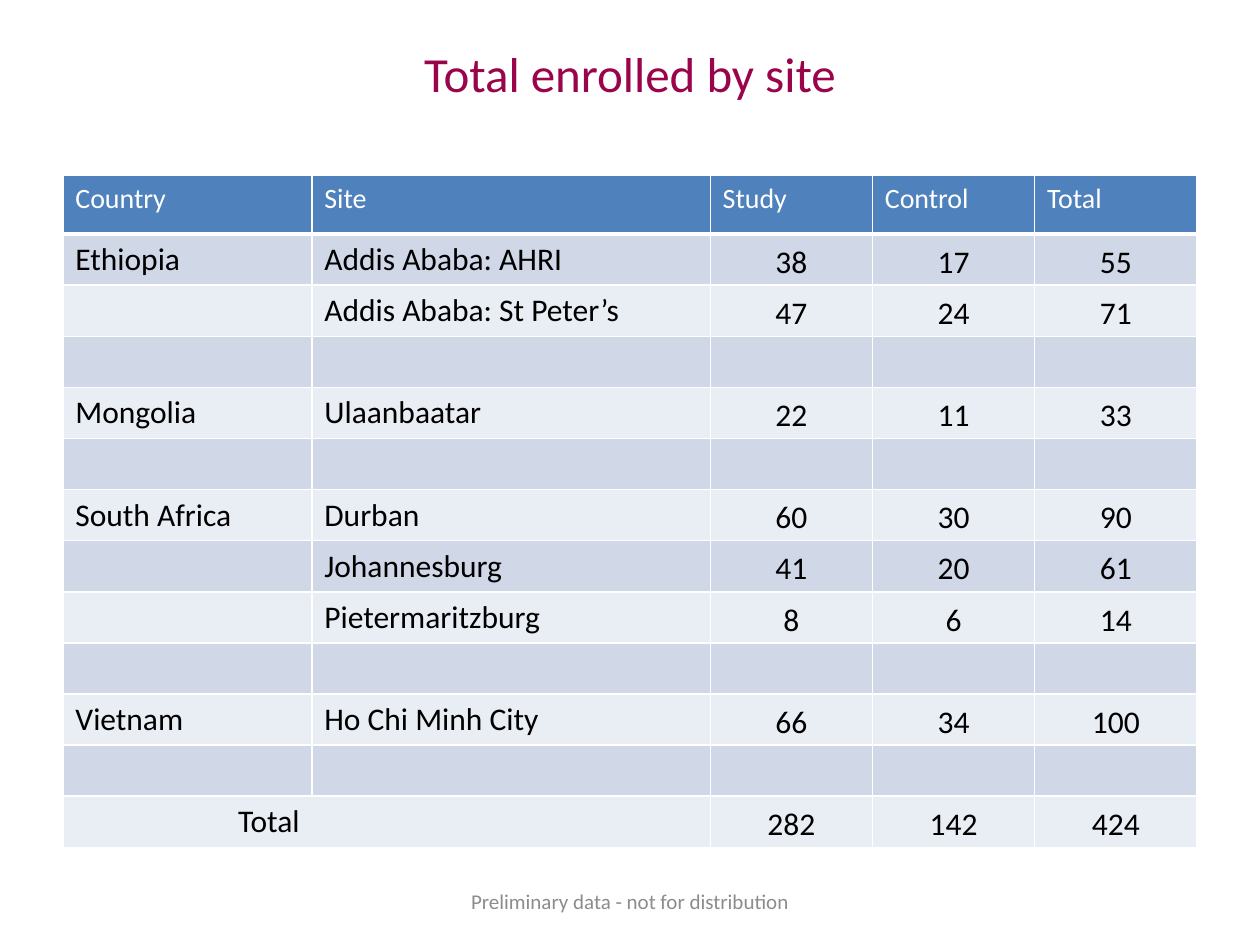
from dataclasses import dataclass
from lxml.etree import SubElement as Sub
from pptx import Presentation as Deck
from pptx.dml.color import RGBColor as Color
from pptx.enum.text import MSO_ANCHOR as Anchor, PP_ALIGN as Align
from pptx.oxml.ns import qn
from pptx.util import Cm, Pt


@dataclass(frozen=True)
class Theme:
    face: str = "Calibri"
    plum: str = "9A044B"
    blue: str = "4F81BD"
    dark: str = "D0D8E8"
    pale: str = "E9EDF4"
    white: str = "FFFFFF"
    black: str = "000000"
    gray: str = "8C8C8C"
    title: int = 28
    head: int = 16
    body: int = 18
    foot: int = 12


THEME = Theme()
WIDTHS = (5.02, 8.03, 3.27, 3.27, 3.27)
TALL, LOW = 1.19, 1.03
HEAD = ("Country", "Site", "Study", "Control", "Total")
GAP = ("",) * 5
ROWS = (
    HEAD,
    ("Ethiopia", "Addis Ababa: AHRI", 38, 17, 55),
    ("", "Addis Ababa: St Peter’s", 47, 24, 71),
    GAP,
    ("Mongolia", "Ulaanbaatar", 22, 11, 33),
    GAP,
    ("South Africa", "Durban", 60, 30, 90),
    ("", "Johannesburg", 41, 20, 61),
    ("", "Pietermaritzburg", 8, 6, 14),
    GAP,
    ("Vietnam", "Ho Chi Minh City", 66, 34, 100),
    GAP,
    ("Total", "", 282, 142, 424),
)
WORD = {"margin_left": Cm(0.25), "margin_right": Cm(0.25),
        "margin_top": Cm(0.13), "margin_bottom": Cm(0.13),
        "vertical_anchor": Anchor.TOP}
COUNT = {"margin_left": Cm(0.17), "margin_right": Cm(0.17),
         "margin_top": 0, "margin_bottom": 0,
         "vertical_anchor": Anchor.MIDDLE}
SUM = WORD | {"margin_left": Cm(3.53)}


def apply(item, form):
    for name, value in form.items():
        setattr(item, name, value)


def write(frame, text, size, color, form):
    para = frame.paragraphs[0]
    apply(para, form)
    run = para.add_run()
    run.text = text
    apply(run.font, {"name": THEME.face, "size": Pt(size), "bold": False})
    run.font.color.rgb = Color.from_string(color)


def edge(cell, base):
    props = cell._tc.get_or_add_tcPr()
    for side, width in (("L", 1), ("R", 1), ("T", 1), ("B", base)):
        line = Sub(props, qn(f"a:ln{side}"), w=str(Pt(width)))
        fill = Sub(line, qn("a:solidFill"))
        Sub(fill, qn("a:srgbClr"), val=THEME.white)


def label(slide, box, text, size, color, anchor):
    frame = slide.shapes.add_textbox(*map(Cm, box)).text_frame
    apply(frame, {"word_wrap": True, "vertical_anchor": anchor})
    write(frame, text, size, color, {"alignment": Align.CENTER})


def fill_cell(cell, value, row):
    top = row == 0
    edge(cell, 3 if top else 1)
    shade = THEME.blue if top else THEME.dark if row % 2 else THEME.pale
    cell.fill.solid()
    cell.fill.fore_color.rgb = Color.from_string(shade)
    count = isinstance(value, int)
    total = cell.is_merge_origin
    apply(cell, COUNT if count else SUM if total else WORD)
    if value != "":
        form = {"alignment": Align.CENTER, "line_spacing": 1.15} if count else {}
        size = THEME.head if top else THEME.body
        color = THEME.white if top else THEME.black
        write(cell.text_frame, str(value), size, color, form)


def grid(slide, box):
    table = slide.shapes.add_table(len(ROWS), len(HEAD), *map(Cm, box)).table
    table.horz_banding = False
    for col, width in zip(table.columns, WIDTHS):
        col.width = Cm(width)
    for row, line in enumerate(table.rows):
        line.height = Cm(LOW if row else TALL)
    last = len(ROWS) - 1
    table.cell(last, 0).merge(table.cell(last, 1))
    for row, values in enumerate(ROWS):
        for col, value in enumerate(values):
            fill_cell(table.cell(row, col), value, row)


def main():
    deck = Deck()
    apply(deck, {"slide_width": Cm(25.4), "slide_height": Cm(19.05)})
    slide = deck.slides.add_slide(deck.slide_layouts[6])
    label(slide, (1.27, 0.76, 22.86, 3.18), "Total enrolled by site",
          THEME.title, THEME.plum, Anchor.TOP)
    grid(slide, (1.27, 3.53, sum(WIDTHS), TALL + LOW * (len(ROWS) - 1)))
    label(slide, (8.68, 17.66, 8.04, 1.01),
          "Preliminary data - not for distribution",
          THEME.foot, THEME.gray, Anchor.MIDDLE)
    deck.save("out.pptx")


if __name__ == "__main__":
    main()
